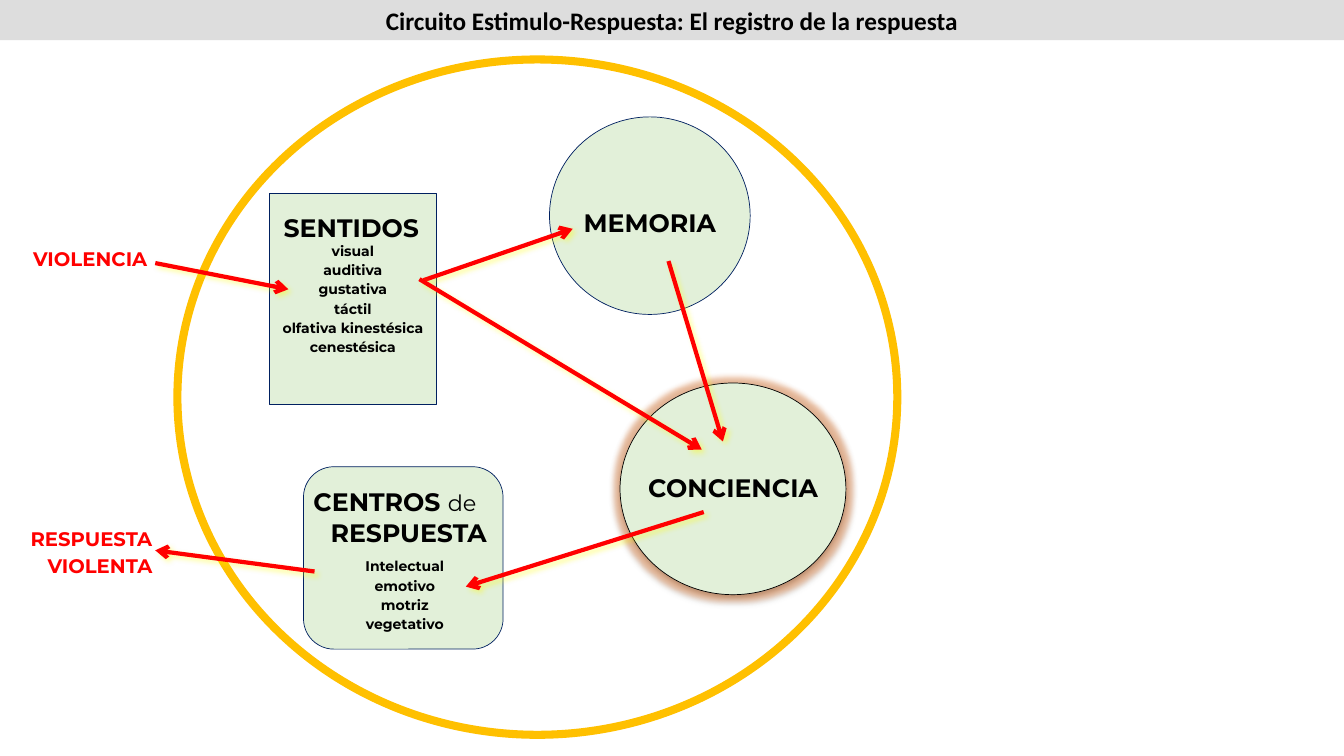
from dataclasses import dataclass
from typing import Optional

from lxml.etree import SubElement
from pptx import Presentation
from pptx.dml.color import RGBColor
from pptx.enum.shapes import MSO_CONNECTOR, MSO_SHAPE
from pptx.enum.text import MSO_ANCHOR, PP_ALIGN
from pptx.oxml.ns import qn
from pptx.util import Inches, Pt

BLACK = RGBColor(0x00, 0x00, 0x00)
NAVY = RGBColor(0x00, 0x20, 0x60)
GREEN = RGBColor(0xE2, 0xF0, 0xD9)
GOLD = RGBColor(0xFF, 0xC0, 0x00)
RED = RGBColor(0xFF, 0x00, 0x00)
YELLOW = RGBColor(0xFF, 0xFF, 0x00)
ORANGE = RGBColor(0xED, 0x7D, 0x31)
GREY = RGBColor(0xDD, 0xDD, 0xDD)


@dataclass
class Region:
    kind: MSO_SHAPE
    box: tuple
    fill: Optional[RGBColor] = GREEN
    line: Optional[RGBColor] = NAVY
    weight: float = 0.5


@dataclass
class Label:
    lines: tuple
    box: tuple
    size: float = 18
    color: RGBColor = BLACK
    align: PP_ALIGN = PP_ALIGN.CENTER


@dataclass
class Arrow:
    start: tuple
    end: tuple


def add_region(slide, region: Region):
    shape = slide.shapes.add_shape(region.kind, *map(Inches, region.box))
    shape.shadow.inherit = False
    if region.fill is None:
        shape.fill.background()
    else:
        shape.fill.solid()
        shape.fill.fore_color.rgb = region.fill
    if region.line is None:
        shape.line.fill.background()
    else:
        shape.line.color.rgb = region.line
        shape.line.width = Pt(region.weight)
    return shape


def write(paragraph, text: str, *, size: float, color: RGBColor = BLACK,
          bold: bool = True, font: str = "Montserrat",
          align: PP_ALIGN = PP_ALIGN.CENTER, spacing: float = 1.0) -> None:
    paragraph.alignment = align
    paragraph.line_spacing = spacing
    run = paragraph.add_run()
    run.text = text
    run.font.name = font
    run.font.size = Pt(size)
    run.font.bold = bold
    run.font.color.rgb = color


def add_frame(slide, box: tuple):
    frame = slide.shapes.add_textbox(*map(Inches, box)).text_frame
    frame.word_wrap = True
    return frame


def add_label(slide, label: Label) -> None:
    frame = add_frame(slide, label.box)
    for index, line in enumerate(label.lines):
        paragraph = frame.add_paragraph() if index else frame.paragraphs[0]
        write(paragraph, line, size=label.size, color=label.color,
              align=label.align, spacing=1.15)


def add_effect(effects, tag: str, color: RGBColor, alpha: int, **settings: str) -> None:
    effect = SubElement(effects, qn(tag), settings)
    tint = SubElement(effect, qn("a:srgbClr"), val=str(color))
    SubElement(tint, qn("a:alpha"), val=str(alpha * 1000))


def add_shadow(effects, color: RGBColor, alpha: int, blur: float,
               distance: float, angle: int) -> None:
    add_effect(effects, "a:outerShdw", color, alpha, blurRad=str(Pt(blur)),
               dist=str(Pt(distance)), dir=str(angle * 60000), rotWithShape="0")


def add_arrow(slide, arrow: Arrow) -> None:
    connector = slide.shapes.add_connector(
        MSO_CONNECTOR.STRAIGHT, *map(Inches, arrow.start + arrow.end))
    connector.line.color.rgb = RED
    connector.line.width = Pt(3)
    properties = connector._element.spPr
    SubElement(properties.find(qn("a:ln")), qn("a:tailEnd"), type="arrow")
    effects = SubElement(properties, qn("a:effectLst"))
    add_shadow(effects, YELLOW, 40, 4, 3, 45)


SENSES = Region(MSO_SHAPE.RECTANGLE, (2.67, 1.92, 1.66, 2.09))
PSYCHE = Region(MSO_SHAPE.OVAL, (1.76, 0.59, 7.14, 6.7), None, GOLD, 5.75)
MEMORY = Region(MSO_SHAPE.OVAL, (5.45, 1.16, 1.99, 1.96))
CONSCIOUSNESS = Region(MSO_SHAPE.OVAL, (6.15, 3.8, 2.24, 2.1), line=BLACK)
CENTRES = Region(MSO_SHAPE.ROUNDED_RECTANGLE, (3.01, 4.63, 1.98, 1.81))
TITLE_BAND = Region(MSO_SHAPE.RECTANGLE, (0, 0, 13.33, 0.4), GREY, None)

LABELS = [
    Label(("MEMORIA",), (5.45, 1.96, 1.99, 0.28)),
    Label(("SENTIDOS",), (2.65, 2.01, 1.67, 0.29)),
    Label(("visual", "auditiva", "gustativa", "táctil",
           "olfativa kinestésica cenestésica"), (2.67, 2.33, 1.66, 1.52), 10),
    Label(("Intelectual", "emotivo", "motriz", "vegetativo"),
          (3.13, 5.46, 1.77, 0.81), 10),
    Label(("CONCIENCIA",), (6.15, 4.59, 2.24, 0.28)),
    Label(("RESPUESTA VIOLENTA",), (0.05, 5.14, 1.56, 0.63), 14, RED, PP_ALIGN.RIGHT),
    Label(("VIOLENCIA",), (0.11, 2.37, 1.45, 0.4), 14, RED, PP_ALIGN.RIGHT),
]

ARROWS = [
    Arrow((1.54, 2.61), (2.86, 2.87)),  # violence to senses
    Arrow((4.2, 2.78), (5.68, 2.27)),  # senses to memory
    Arrow((4.16, 2.77), (6.96, 4.46)),  # senses to consciousness
    Arrow((6.63, 2.59), (7.17, 4.38)),  # memory to consciousness
    Arrow((6.98, 5.08), (4.62, 5.82)),  # consciousness to centres
    Arrow((3.12, 5.67), (1.54, 5.46)),  # centres to violent response
]


def main() -> None:
    presentation = Presentation()
    presentation.slide_width = Inches(13.33)
    presentation.slide_height = Inches(7.5)
    slide = presentation.slides.add_slide(presentation.slide_layouts[6])

    # Circuit regions
    for region in (SENSES, PSYCHE, MEMORY):
        add_region(slide, region)
    consciousness = add_region(slide, CONSCIOUSNESS)
    effects = consciousness._element.spPr.find(qn("a:effectLst"))
    add_effect(effects, "a:glow", ORANGE, 40, rad=str(Pt(8)))
    add_shadow(effects, BLACK, 38, 3.1, 1.6, 90)
    add_region(slide, CENTRES)

    # Heading of the response centres, second line set in
    heading = add_frame(slide, (3.01, 4.78, 1.98, 0.52))
    centres = heading.paragraphs[0]
    write(centres, "CENTROS ", size=18, align=PP_ALIGN.LEFT)
    write(centres, "de", size=16, bold=False, align=PP_ALIGN.LEFT)
    response = heading.add_paragraph()
    response._p.get_or_add_pPr().set("marL", str(Inches(0.17)))
    write(response, "RESPUESTA", size=18, align=PP_ALIGN.LEFT)

    # Labels and flow
    for label in LABELS:
        add_label(slide, label)
    for arrow in ARROWS:
        add_arrow(slide, arrow)

    # Title band
    title = add_region(slide, TITLE_BAND).text_frame
    title.vertical_anchor = MSO_ANCHOR.MIDDLE
    write(title.paragraphs[0], "Circuito Estimulo-Respuesta: El registro de la respuesta",
          size=18, font="Calibri")

    presentation.save("out.pptx")


if __name__ == "__main__":
    main()
